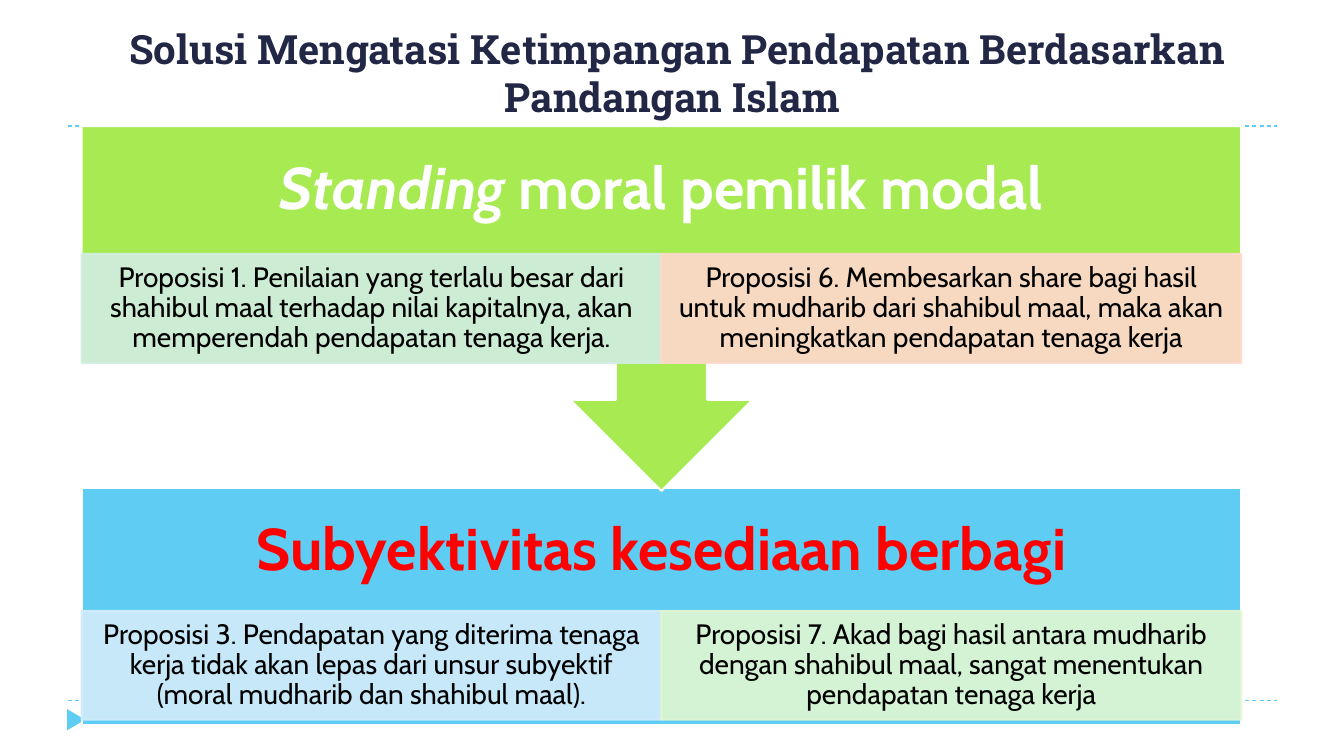
from lxml import etree
from pptx import Presentation
from pptx.dml.color import RGBColor
from pptx.enum.dml import MSO_LINE
from pptx.enum.shapes import MSO_CONNECTOR, MSO_SHAPE
from pptx.enum.text import MSO_ANCHOR, PP_ALIGN
from pptx.oxml.ns import qn
from pptx.util import Inches, Pt

RECT = MSO_SHAPE.RECTANGLE
CALLOUT = MSO_SHAPE.UP_ARROW_CALLOUT
TRIANGLE = MSO_SHAPE.ISOSCELES_TRIANGLE

COLORS = {
    "navy": "212745", "sky": "5ECCF3", "lime": "A7EA52",
    "white": "FFFFFF", "red": "FF0000", "black": "000000",
    "mint": "D2EDE3", "peach": "FFD8CD", "ice": "D2ECFA", "leaf": "E1F7D1",
}
LEFT, WIDTH = 0.81, 11.5
HEADER_H, BOX_H = 1.27, 1.08


def write(shape, runs, size, color, font="Cabin", bold=False, inset=(0.1, 0.05),
          anchor=MSO_ANCHOR.MIDDLE, spacing=0.9):
    """Fill a shape with one centred paragraph; runs are (text, italic) pairs."""
    tf = shape.text_frame
    tf.word_wrap = True
    tf.vertical_anchor = anchor
    tf.margin_left = tf.margin_right = Inches(inset[0])
    tf.margin_top = tf.margin_bottom = Inches(inset[1])
    p = tf.paragraphs[0]
    p.alignment = PP_ALIGN.CENTER
    p.line_spacing = spacing
    for text, italic in runs:
        r = p.add_run()
        r.text = text
        r.font.name = font
        r.font.size = Pt(size)
        r.font.bold = bold
        r.font.italic = italic
        r.font.color.rgb = RGBColor.from_string(COLORS[color])


def add_block(kind, x, y, w, h, fill, line=None, rotation=0, alpha=None):
    """Add a filled shape; alpha is the opacity of fill and line in percent."""
    shape = s.shapes.add_shape(kind, Inches(x), Inches(y), Inches(w), Inches(h))
    shape.shadow.inherit = False
    shape.rotation = rotation
    shape.fill.solid()
    shape.fill.fore_color.rgb = RGBColor.from_string(COLORS[fill])
    if line:
        shape.line.color.rgb = RGBColor.from_string(COLORS[line])
        shape.line.width = Pt(1.5)
    else:
        shape.line.fill.background()
    if alpha:
        for clr in shape._element.spPr.iter(qn("a:srgbClr")):
            etree.SubElement(clr, qn("a:alpha")).set("val", str(alpha * 1000))
    return shape


prs = Presentation()
prs.slide_width, prs.slide_height = Inches(13.33), Inches(7.5)
s = prs.slides.add_slide(prs.slide_layouts[5])

# Frame: dashed rules and corner marker
for y in (6.95, 1.25):
    rule = s.shapes.add_connector(MSO_CONNECTOR.STRAIGHT, Inches(0.67), Inches(y),
                                  Inches(12.67), Inches(y))
    rule.line.color.rgb = RGBColor.from_string(COLORS["sky"])
    rule.line.width = Pt(0.75)
    rule.line.dash_style = MSO_LINE.DASH
    etree.SubElement(rule._element.spPr, qn("a:effectLst"))
add_block(TRIANGLE, 0.65, 7.05, 0.21, 0.18, "sky", rotation=90)

# Title
title = s.shapes.title
title.left, title.top = Inches(0.67), Inches(0.17)
title.width, title.height = Inches(12), Inches(1.08)
write(title, [(" Solusi Mengatasi Ketimpangan Pendapatan Berdasarkan Pandangan Islam", False)],
      28.8, "navy", font="Roboto Slab", bold=True, anchor=MSO_ANCHOR.BOTTOM, spacing=1.0)

# Two stages, the lower one first so that the arrow lies above it
stages = [
    (RECT, 4.84, 2.35, 0, "sky", "red", 6.06,
     [("Subyektivitas kesediaan berbagi", False)],
     [("ice", "Proposisi 3. Pendapatan yang diterima tenaga kerja tidak akan lepas dari "
              "unsur subyektif (moral mudharib dan shahibul maal)."),
      ("leaf", "Proposisi 7. Akad bagi hasil antara mudharib dengan shahibul maal, "
               "sangat menentukan pendapatan tenaga kerja")]),
    (CALLOUT, 1.25, 3.62, 180, "lime", "white", 2.52,
     [("Standing ", True), ("moral pemilik modal", False)],
     [("mint", "Proposisi 1. Penilaian yang terlalu besar dari shahibul maal terhadap "
               "nilai kapitalnya, akan memperendah pendapatan tenaga kerja."),
      ("peach", "Proposisi 6. Membesarkan share bagi hasil untuk mudharib dari shahibul "
                "maal, maka akan meningkatkan pendapatan tenaga kerja")]),
]
for kind, top, height, rotation, fill, color, box_top, heading, propositions in stages:
    add_block(kind, LEFT, top, WIDTH, height, fill, line="white", rotation=rotation)
    header = s.shapes.add_textbox(Inches(LEFT), Inches(top), Inches(WIDTH), Inches(HEADER_H))
    write(header, heading, 42, color, bold=True, inset=(0.33, 0.33))
    box_w = WIDTH / len(propositions)
    for i, (tint, text) in enumerate(propositions):
        box = add_block(RECT, LEFT + i * box_w, box_top, box_w, BOX_H, tint,
                        line=tint, alpha=90)
        write(box, [(text, False)], 20, "black", inset=(0.16, 0.03))

prs.save("out.pptx")
